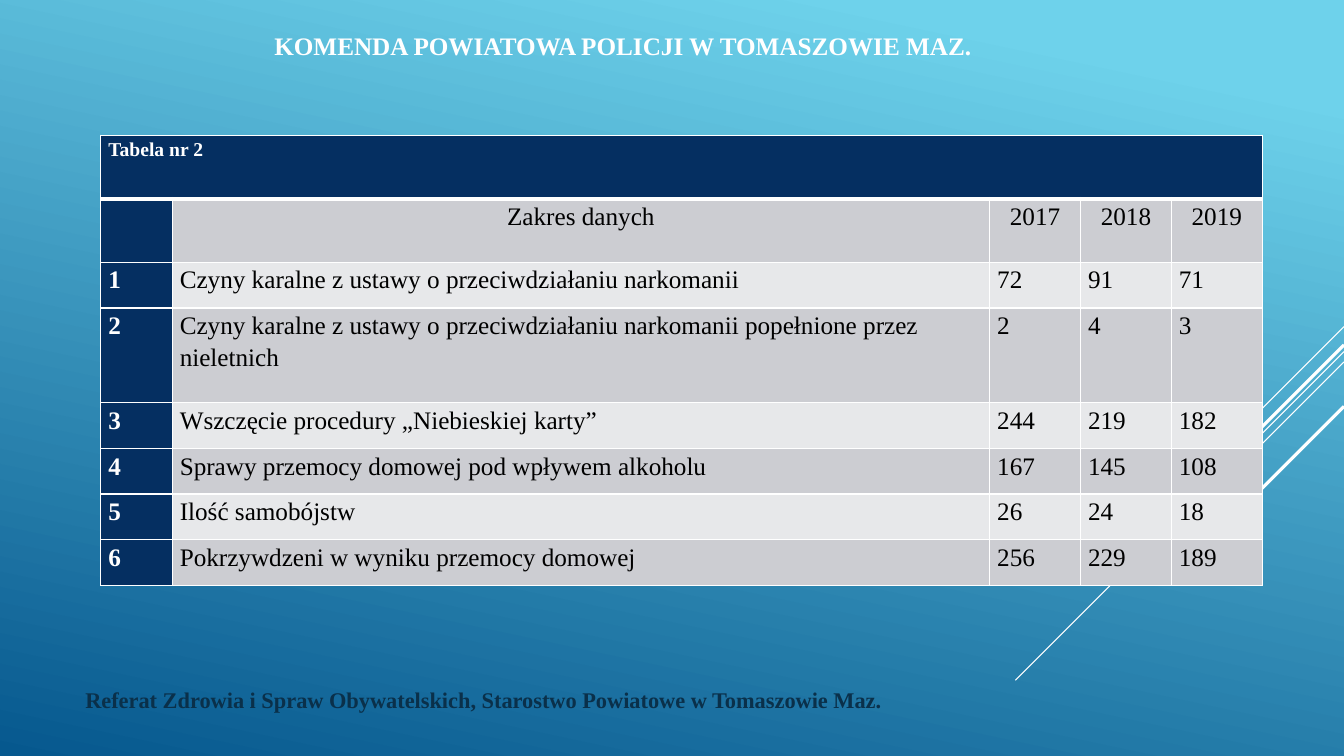
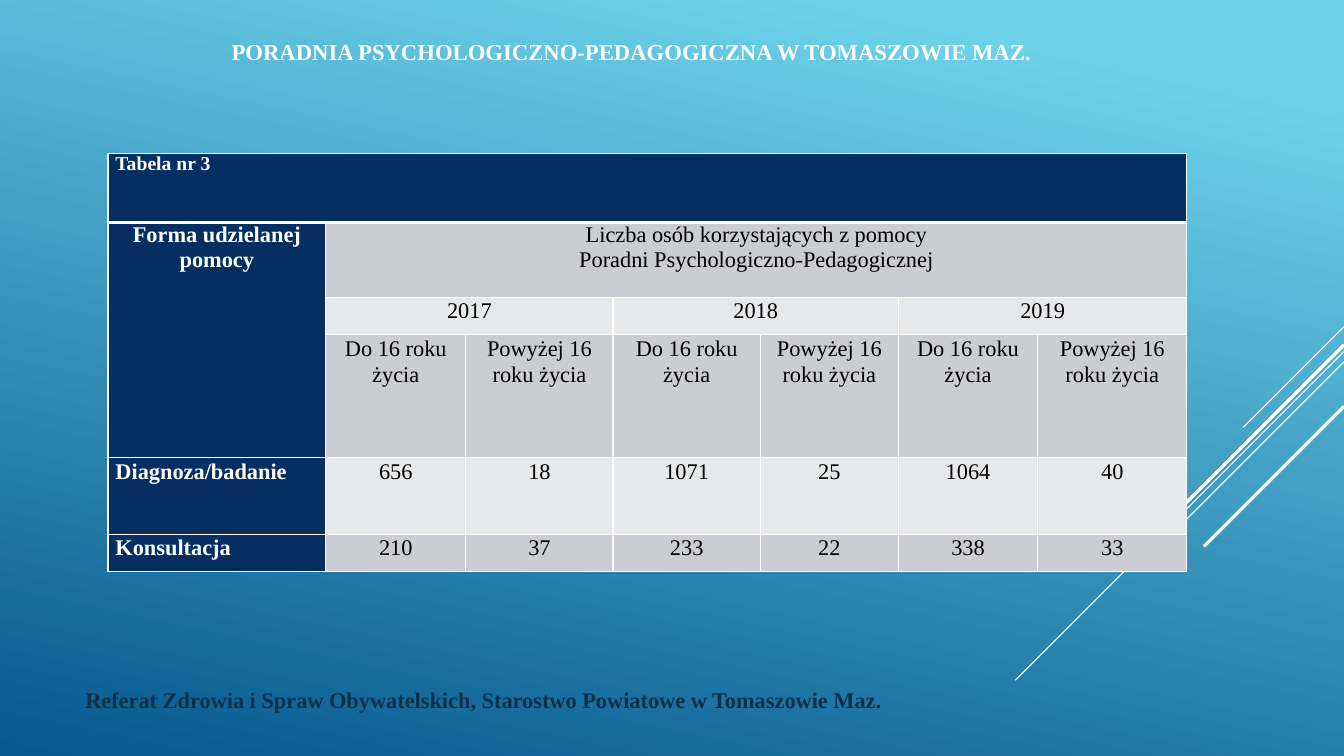
from collections import namedtuple
from dataclasses import dataclass

from lxml import etree
from pptx import Presentation
from pptx.dml.color import RGBColor
from pptx.enum.shapes import MSO_CONNECTOR
from pptx.enum.text import MSO_ANCHOR, PP_ALIGN
from pptx.oxml.ns import qn
from pptx.util import Cm, Pt

STRAIGHT = MSO_CONNECTOR.STRAIGHT
TOP = MSO_ANCHOR.TOP
LEFT, CENTER = PP_ALIGN.LEFT, PP_ALIGN.CENTER

Box = namedtuple("Box", "left top width height")


@dataclass(frozen=True)
class Theme:
    font: str = "Times New Roman"
    sky: str = "6ED2EB"
    ocean: str = "06588E"
    navy: str = "052F61"
    footer: str = "0A304A"
    white: str = "FFFFFF"
    black: str = "000000"
    bands: tuple = ("E7E8EA", "CCCDD2")
    caption_size: float = 14
    footer_size: float = 16
    rule: float = 1
    heavy_rule: float = 3


@dataclass(frozen=True)
class TablePage:
    """Lengths are centimetres; merges are (first cell, last cell) pairs."""
    title: str
    title_box: Box
    title_size: float
    title_inset: float
    table_left: float
    table_top: float
    columns: tuple
    heights: tuple
    rows: tuple
    merges: tuple
    body_size: float
    line_spacing: float
    spaced_from_row: int
    centred_body: bool


THEME = Theme()
PAGE_WIDTH, PAGE_HEIGHT = 33.87, 19.05
FOOTER_TEXT = "Referat Zdrowia i Spraw Obywatelskich, Starostwo Powiatowe w Tomaszowie Maz."
FOOTER_BOX = Box(1.9, 17.15, 20.95, 1.02)
# Diagonal stripes: height at the right edge, run to the left, line width
STRIPES = (
    (8.23, 2.54, 0.75),
    (8.86, 8.28, 0.75),
    (9.12, 5.26, 0.75),
    (8.69, 4.85, 2.25),
    (10.24, 3.53, 2.25),
)

POLICE = TablePage(
    title="KOMENDA POWIATOWA POLICJI W TOMASZOWIE MAZ.",
    title_box=Box(2.77, 0.71, 25.86, 2.11),
    title_size=18,
    title_inset=0.05,
    table_left=2.54,
    table_top=3.41,
    columns=(1.8, 20.6, 2.29, 2.29, 2.29),
    heights=(1.6, 1.6, 1.15, 2.39, 1.15, 1.15, 1.15, 1.15),
    rows=(
        ("Tabela nr 2", "", "", "", ""),
        ("", "Zakres danych", "2017", "2018", "2019"),
        ("1", "Czyny karalne z ustawy o przeciwdziałaniu narkomanii", "72", "91", "71"),
        ("2", "Czyny karalne z ustawy o przeciwdziałaniu narkomanii popełnione przez nieletnich",
         "2", "4", "3"),
        ("3", "Wszczęcie procedury „Niebieskiej karty”", "244", "219", "182"),
        ("4", "Sprawy przemocy domowej pod wpływem alkoholu", "167", "145", "108"),
        ("5", "Ilość samobójstw", "26", "24", "18"),
        ("6", "Pokrzywdzeni w wyniku przemocy domowej", "256", "229", "189"),
    ),
    merges=(((0, 0), (0, 4)),),
    body_size=18,
    line_spacing=1.15,
    spaced_from_row=0,
    centred_body=False,
)

COUNSELLING = TablePage(
    title="PORADNIA PSYCHOLOGICZNO-PEDAGOGICZNA W TOMASZOWIE MAZ.",
    title_box=Box(3.18, 0.71, 25.45, 2.44),
    title_size=16.2,
    title_inset=0.25,
    table_left=2.72,
    table_top=3.86,
    columns=(5.49, 3.53, 3.71, 3.71, 3.48, 3.51, 3.76),
    heights=(1.75, 1.88, 0.94, 3.1, 1.93, 0.94),
    rows=(
        ("Tabela nr 3", "", "", "", "", "", ""),
        ("Forma udzielanej pomocy",
         "Liczba osób korzystających z pomocy\nPoradni Psychologiczno-Pedagogicznej",
         "", "", "", "", ""),
        ("", "2017", "", "2018", "", "2019", ""),
        ("",) + ("Do 16 roku życia", "Powyżej 16 roku życia") * 3,
        ("Diagnoza/badanie", "656", "18", "1071", "25", "1064", "40"),
        ("Konsultacja", "210", "37", "233", "22", "338", "33"),
    ),
    merges=(
        ((0, 0), (0, 6)),
        ((1, 0), (3, 0)),
        ((1, 1), (1, 6)),
        ((2, 1), (2, 2)),
        ((2, 3), (2, 4)),
        ((2, 5), (2, 6)),
    ),
    body_size=16,
    line_spacing=1.07,
    spaced_from_row=2,
    centred_body=True,
)


def set_values(target, values):
    for name, value in values.items():
        setattr(target, name, value)


def write(frame, text, size, color, bold, **para_values):
    frame.text = text
    for para in frame.paragraphs:
        set_values(para, para_values)
        for span in para.runs:
            set_values(span.font, {"name": THEME.font, "size": Pt(size), "bold": bold})
            span.font.color.rgb = RGBColor.from_string(color)


def add_text(page, box, text, size, color, align=LEFT, top_inset=0.13):
    frame = page.shapes.add_textbox(*map(Cm, box)).text_frame
    set_values(frame, {"word_wrap": True, "vertical_anchor": TOP, "margin_top": Cm(top_inset)})
    write(frame, text, size, color, True, alignment=align)


def paint_background(master):
    fill = master.background.fill
    fill.gradient()
    fill.gradient_angle = 258
    for stop, color, position in zip(fill.gradient_stops, (THEME.sky, THEME.ocean), (0.1, 1)):
        stop.color.rgb = RGBColor.from_string(color)
        stop.position = position


def add_stripes(page):
    for top, run, width in STRIPES:
        ends = (PAGE_WIDTH, top, PAGE_WIDTH - run, top + run)
        stripe = page.shapes.add_connector(STRAIGHT, *map(Cm, ends))
        stripe.line.color.rgb = RGBColor.from_string(THEME.white)
        stripe.line.width = Pt(width)
        etree.SubElement(stripe._element.spPr, qn("a:effectLst"))


def add_borders(cell, row):
    properties = cell._tc.get_or_add_tcPr()
    top = THEME.heavy_rule if row == 1 else THEME.rule
    bottom = THEME.heavy_rule if row == 0 else THEME.rule
    for tag, width in (("lnL", THEME.rule), ("lnR", THEME.rule), ("lnT", top), ("lnB", bottom)):
        line = etree.SubElement(properties, qn(f"a:{tag}"), w=str(Pt(width)))
        paint = etree.SubElement(line, qn("a:solidFill"))
        etree.SubElement(paint, qn("a:srgbClr"), val=THEME.white)


def fill_cell(cell, row, column, text, content):
    heading = row == 0 or column == 0
    centred = row == 1 or (row > 1 and column > 0 and content.centred_body)
    spaced = row >= content.spaced_from_row
    set_values(cell, {"margin_left": Cm(0.19), "margin_right": Cm(0.19),
                      "margin_top": 0, "margin_bottom": 0})
    add_borders(cell, row)
    cell.fill.solid()
    cell.fill.fore_color.rgb = RGBColor.from_string(THEME.navy if heading else THEME.bands[row % 2])
    write(
        cell.text_frame, text,
        THEME.caption_size if row == 0 else content.body_size,
        THEME.white if heading else THEME.black,
        heading,
        alignment=CENTER if centred else LEFT,
        line_spacing=content.line_spacing if spaced else 1.0,
        space_after=Pt(8 if spaced else 0),
    )


def add_data_table(page, content):
    box = Box(content.table_left, content.table_top, sum(content.columns), sum(content.heights))
    table = page.shapes.add_table(
        len(content.heights), len(content.columns), *map(Cm, box)).table
    set_values(table, {"first_row": False, "horz_banding": False})
    for column, width in zip(table.columns, content.columns):
        column.width = Cm(width)
    for row, height in zip(table.rows, content.heights):
        row.height = Cm(height)
    for row, texts in enumerate(content.rows):
        for column, text in enumerate(texts):
            fill_cell(table.cell(row, column), row, column, text, content)
    for first, last in content.merges:
        table.cell(*first).merge(table.cell(*last))


def add_table_page(deck, content):
    page = deck.slides.add_slide(deck.slide_layouts[6])
    add_stripes(page)
    add_text(page, content.title_box, content.title, content.title_size,
             THEME.white, CENTER, content.title_inset)
    add_text(page, FOOTER_BOX, FOOTER_TEXT, THEME.footer_size, THEME.footer)
    add_data_table(page, content)


def main():
    deck = Presentation()
    set_values(deck, {"slide_width": Cm(PAGE_WIDTH), "slide_height": Cm(PAGE_HEIGHT)})
    paint_background(deck.slide_master)
    for content in (POLICE, COUNSELLING):
        add_table_page(deck, content)
    deck.save("out.pptx")


if __name__ == "__main__":
    main()
